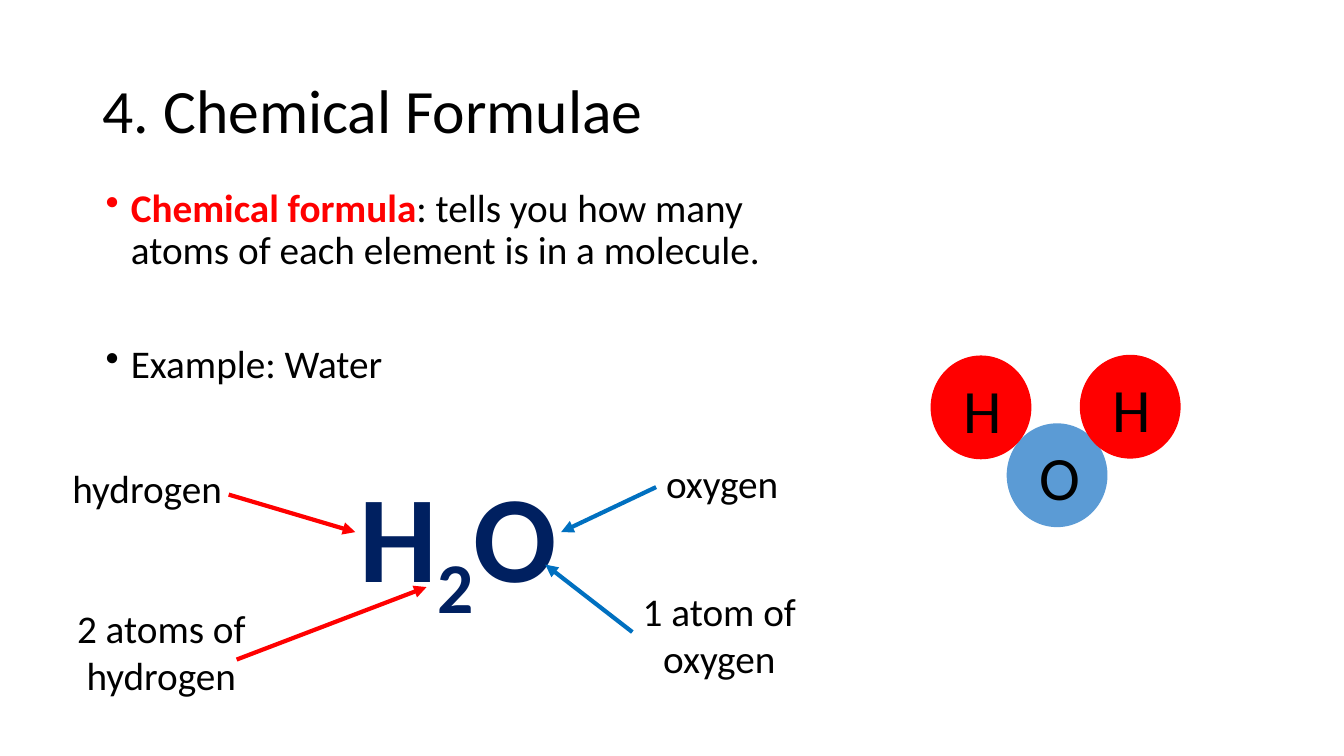
from lxml import etree
from pptx import Presentation
from pptx.dml.color import RGBColor
from pptx.enum.shapes import MSO_CONNECTOR, MSO_SHAPE
from pptx.enum.text import MSO_ANCHOR, PP_ALIGN
from pptx.oxml.ns import qn
from pptx.util import Inches, Pt

STRAIGHT, OVAL = MSO_CONNECTOR.STRAIGHT, MSO_SHAPE.OVAL
TOP, MIDDLE = MSO_ANCHOR.TOP, MSO_ANCHOR.MIDDLE
LEFT, CENTER = PP_ALIGN.LEFT, PP_ALIGN.CENTER

BLACK = RGBColor(0x00, 0x00, 0x00)
RED = RGBColor(0xFF, 0x00, 0x00)
BLUE = RGBColor(0x00, 0x70, 0xC0)
SKY = RGBColor(0x5B, 0x9B, 0xD5)
NAVY = RGBColor(0x00, 0x20, 0x60)

FONT = "Calibri"
HEADING, BODY, FORMULA = 44, 28, 88
WIDTH, HEIGHT = 13.33, 7.5


def add_runs(paragraph, texts, size, color=BLACK, bold=False):
    for text in texts:
        run = paragraph.add_run()
        run.text = text
        run.font.name, run.font.size = FONT, Pt(size)
        run.font.color.rgb, run.font.bold = color, bold
    return paragraph.runs


def add_text_frame(slide, box, anchor=TOP):
    frame = slide.shapes.add_textbox(*map(Inches, box)).text_frame
    frame.word_wrap = True
    frame.vertical_anchor = anchor
    return frame


def add_label(slide, box, text, size, align=LEFT, anchor=TOP):
    paragraph = add_text_frame(slide, box, anchor).paragraphs[0]
    paragraph.alignment = align
    add_runs(paragraph, [text], size)
    return paragraph


def add_bullet(paragraph):
    properties = paragraph._p.get_or_add_pPr()
    properties.set("marL", str(Inches(0.25)))
    properties.set("indent", str(Inches(-0.25)))
    etree.SubElement(properties, qn("a:buChar")).set("char", "•")


def add_arrow(slide, start, end, color):
    arrow = slide.shapes.add_connector(STRAIGHT, *map(Inches, start + end))
    arrow.line.color.rgb, arrow.line.width = color, Pt(3)
    etree.SubElement(arrow.line._get_or_add_ln(), qn("a:tailEnd")).set("type", "triangle")
    etree.SubElement(arrow._element.spPr, qn("a:effectLst"))


def build_title(slide, box):
    add_label(slide, box, "4. Chemical Formulae", HEADING, anchor=MIDDLE).line_spacing = 0.9


def build_definition(slide, box):
    frame = add_text_frame(slide, box)
    definition, example = frame.paragraphs[0], frame.add_paragraph()
    for paragraph in (definition, example):
        paragraph.line_spacing = 0.9
        add_bullet(paragraph)
    example.space_before = Pt(51)
    term = add_runs(definition, ["Chemical formula",
                                 ": tells you how many atoms of each element is in a molecule."], BODY)[0]
    term.font.bold, term.font.color.rgb = True, RED
    add_runs(example, ["Example: Water"], BODY)


def build_molecule(slide, box):
    left, top, width, height = box
    atom_width, atom_height = 1, 1.03
    # Atoms as shares of the room left beside one atom; oxygen lies behind
    atoms = [("O", 0.51, 1, SKY), ("H", 1, 0, RED), ("H", 0, 0.01, RED)]
    places = [(symbol, left + across * (width - atom_width),
               top + down * (height - atom_height), color)
              for symbol, across, down, color in atoms]
    for _, x, y, color in places:
        atom = slide.shapes.add_shape(OVAL, *map(Inches, (x, y, atom_width, atom_height)))
        atom.shadow.inherit = False
        atom.fill.solid()
        atom.fill.fore_color.rgb = color
        atom.line.fill.background()
    for symbol, x, y, _ in places:
        add_label(slide, (x + 0.23, y + 0.11, 1.05, 0.84), symbol, HEADING)


def build_formula(slide, box):
    left, top, width, height = box

    def at(across, down):
        return left + across * width, top + down * height

    # Formula in the middle of the diagram
    formula = add_text_frame(slide, (*at(0.3, 0), 0.4 * width, 1.6)).paragraphs[0]
    formula.alignment = CENTER
    subscript = add_runs(formula, ["H", "2", "O"], FORMULA, NAVY, True)[1]
    subscript.font._element.set("baseline", "-25000")

    # Label, its place, its height, alignment, arrow start and end, colour
    callouts = [
        ("hydrogen", (0, 0.02), 0.57, LEFT, (0.21, 0.16), (0.37, 0.31), RED),
        ("2 atoms of hydrogen", (0, 0.58), 1.04, CENTER, (0.22, 0.82), (0.46, 0.53), RED),
        ("oxygen", (0.75, 0), 0.57, LEFT, (0.75, 0.13), (0.63, 0.31), BLUE),
        ("1 atom of oxygen", (0.705, 0.51), 1.04, CENTER, (0.72, 0.71), (0.61, 0.44), BLUE),
    ]
    for text, place, label_height, align, start, end, color in callouts:
        add_label(slide, (*at(*place), 1.96, label_height), text, BODY, align)
        add_arrow(slide, at(*start), at(*end), color)


def main():
    deck = Presentation()
    deck.slide_width, deck.slide_height = Inches(WIDTH), Inches(HEIGHT)
    slide = deck.slides.add_slide(deck.slide_layouts[6])
    build_title(slide, (0.92, 0.4, 11.5, 1.45))
    build_definition(slide, (0.95, 1.82, 7.16, 2.2))
    build_molecule(slide, (9.23, 3.52, 2.48, 1.71))
    build_formula(slide, (0.62, 4.51, 7.85, 2.48))
    deck.save("out.pptx")


if __name__ == "__main__":
    main()
